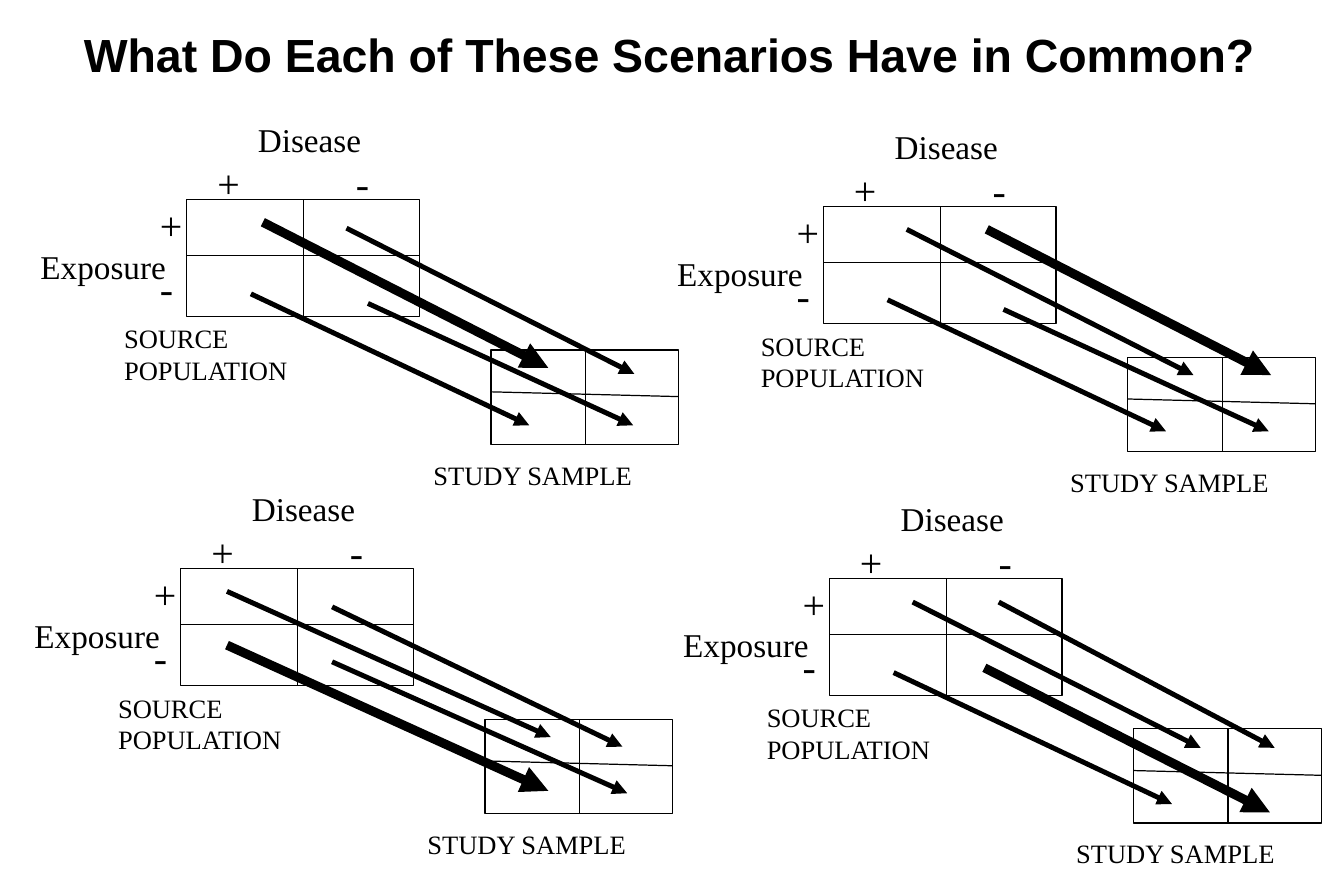
import pptx
import pptx.dml.color
import pptx.enum.shapes
import pptx.enum.text
import pptx.oxml.ns
import pptx.util
from lxml import etree
from pptx.util import Inches, Pt

BLACK = pptx.dml.color.RGBColor(0, 0, 0)
WHITE = pptx.dml.color.RGBColor(255, 255, 255)
SERIF = "Times New Roman"
TITLE = "What Do Each of These Scenarios Have in Common?"
THIN, MEDIUM, THICK = 0.75, 3, 5.5

# Each scenario: top left of its source table, then its arrows
# (from x, from y, to x, to y) on the slide, the emphasised one first.
SCENARIOS = [
    ((6.89, 1.73), [(8.26, 1.92, 10.64, 3.14), (7.43, 2.51, 9.76, 3.61),
                    (7.59, 1.92, 9.99, 3.14), (8.4, 2.59, 10.62, 3.61)]),
    ((1.56, 1.67), [(2.2, 1.86, 4.59, 3.08), (2.1, 2.46, 4.43, 3.56),
                    (2.9, 1.91, 5.31, 3.13), (3.08, 2.54, 5.3, 3.56)]),
    ((6.94, 4.84), [(8.24, 5.59, 10.63, 6.8), (7.48, 5.63, 9.81, 6.73),
                    (7.64, 5.04, 10.05, 6.26), (8.36, 5.04, 10.67, 6.26)]),
    ((1.51, 4.76), [(1.9, 5.4, 4.59, 6.62), (2.78, 5.08, 5.21, 6.25),
                    (1.9, 4.95, 4.61, 6.17), (2.78, 5.54, 5.25, 6.64)]),
]

# Everything below is measured from the top left of the source table.
TABLES = [(0, 0, 1.95, 0.98), (2.55, 1.26, 1.57, 0.79)]
DIVIDERS = [(0.98, 0, 0.98, 0.98), (0, 0.47, 1.95, 0.47),
            (3.34, 1.26, 3.34, 2.05), (2.55, 1.61, 4.12, 1.65)]
# Lines, position and size, text size, wrap, space before each line
LABELS = [
    (["Disease"], (0.5, -0.72, 1.51, 0.44), 20, True, 0),
    (["Exposure"], (-1.32, 0.34, 1.26, 0.44), 20, False, 0),
    (["+\t-"], (0.16, -0.39, 1.49, 0.5), 24, True, 0),
    (["+", "-"], (-0.32, -0.04, 0.25, 1.04), 24, True, 9),
    (["SOURCE", "POPULATION"], (-0.62, 0.98, 1.6, 0.64), 16, True, 0),
    (["STUDY SAMPLE"], (1.97, 2.12, 1.88, 0.37), 16, False, 0),
]
SIGN_TAB = 1.16


def add_line(shapes, ends, width, arrow=False):
    line = shapes.add_connector(pptx.enum.shapes.MSO_CONNECTOR.STRAIGHT,
                                *map(Inches, ends))
    line.line.color.rgb = BLACK
    line.line.width = Pt(width)
    if arrow:
        etree.SubElement(line.line._get_or_add_ln(),
                         pptx.oxml.ns.qn("a:tailEnd"), type="triangle")
    etree.SubElement(line._element.spPr, pptx.oxml.ns.qn("a:effectLst"))


def add_table_outline(shapes, bounds):
    outline = shapes.add_shape(pptx.enum.shapes.MSO_SHAPE.RECTANGLE,
                               *map(Inches, bounds))
    outline.shadow.inherit = False
    outline.fill.background()
    outline.line.color.rgb = BLACK
    outline.line.width = Pt(THIN)


def add_label(shapes, lines, bounds, size, wrap, gap):
    frame = shapes.add_textbox(*map(Inches, bounds)).text_frame
    frame.word_wrap = wrap
    for number, words in enumerate(lines):
        para = frame.add_paragraph() if number else frame.paragraphs[0]
        para.add_run().text = words
        para.font.name = SERIF
        para.font.size = Pt(size)
        para.font.color.rgb = BLACK
        if number:
            para.space_before = Pt(gap)
        if "\t" in words:
            tabs = etree.Element(pptx.oxml.ns.qn("a:tabLst"))
            etree.SubElement(tabs, pptx.oxml.ns.qn("a:tab"),
                             pos=str(Inches(SIGN_TAB)), algn="l")
            para._p.get_or_add_pPr().insert(0, tabs)


def add_title(page):
    title = page.shapes.title
    title.left, title.top, title.width, title.height = map(
        Inches, (0.54, 0.17, 10.12, 0.57))
    frame = title.text_frame
    frame.text = TITLE
    frame.word_wrap = False
    frame.auto_size = pptx.enum.text.MSO_AUTO_SIZE.NONE
    frame.vertical_anchor = pptx.enum.text.MSO_ANCHOR.TOP
    para = frame.paragraphs[0]
    para.alignment = pptx.enum.text.PP_ALIGN.CENTER
    para.font.name = "Arial"
    para.font.size = Pt(28)
    para.font.bold = True
    para.font.color.rgb = BLACK


def add_scenario(page, origin, arrows):
    shapes = page.shapes.add_group_shape().shapes
    left, top = origin
    for x, y, width, height in TABLES:
        add_table_outline(shapes, (left + x, top + y, width, height))
    for x1, y1, x2, y2 in DIVIDERS:
        add_line(shapes, (left + x1, top + y1, left + x2, top + y2), THIN)
    for number, ends in enumerate(arrows):
        add_line(shapes, ends, MEDIUM if number else THICK, arrow=True)
    for lines, (x, y, width, height), size, wrap, gap in LABELS:
        add_label(shapes, lines, (left + x, top + y, width, height),
                  size, wrap, gap)


def main():
    deck = pptx.Presentation()
    deck.slide_width, deck.slide_height = Inches(11.25), Inches(7.5)
    page = deck.slides.add_slide(deck.slide_layouts.get_by_name("Title Only"))
    page.background.fill.solid()
    page.background.fill.fore_color.rgb = WHITE
    add_title(page)
    for origin, arrows in SCENARIOS:
        add_scenario(page, origin, arrows)
    deck.save("out.pptx")


if __name__ == "__main__":
    main()
